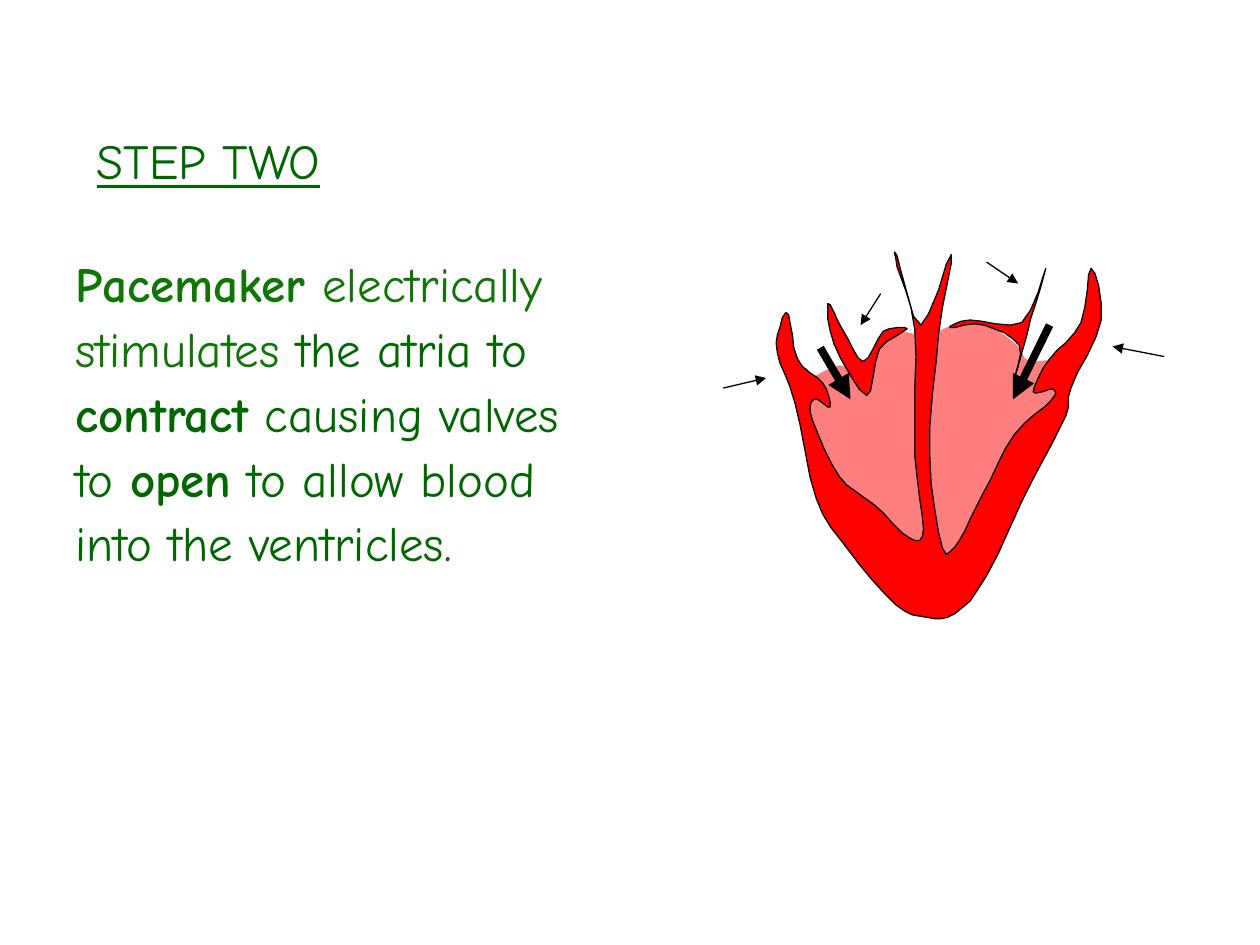
import lxml.etree
import pptx
import pptx.dml.color
import pptx.enum.shapes
import pptx.oxml.ns
import pptx.util

WIDTH, HEIGHT = pptx.util.Inches(10), pptx.util.Inches(7.5)
COLUMNS = 1000
CELL = WIDTH // COLUMNS
CURVE_STEPS = 4
FONT = "Comic Neue"
COLORS = {"muscle": "FF0000", "outline": "000000", "heading": "006600", "pacemaker": "107407"}

LEFT_CHAMBER = [
    (640, 318), (680, 410), (736, 437), (732, 310), (731, 270), (702, 264), (685, 290),
    (660, 292),
]
RIGHT_CHAMBER = [
    (740, 272), (736, 360), (750, 440), (795, 385), (842, 322), (842, 288), (816, 286),
    (806, 273), (776, 257),
]
HEART_WALL = [
    (620, 256), (617, 280), (631, 320), (648, 396), (673, 436), (711, 480), (736, 490),
    (758, 487), (783, 457), (820, 380), (846, 330), (850, 308), (874, 254), (866, 213),
    (858, 256), (833, 285), (820, 311), (836, 309), (834, 318), (805, 345), (780, 392),
    (762, 428), (748, 435), (738, 362), (745, 265), (755, 202), (731, 258), (712, 203),
    (712, 212), (726, 261), (726, 361), (733, 420), (722, 427), (693, 400), (666, 378),
    (645, 334), (646, 317), (659, 323), (653, 304), (633, 285), (626, 250),
]
LEFT_VALVE = [
    (657, 241), (662, 273), (688, 314), (698, 277), (720, 261), (701, 263), (685, 287),
    (669, 262),
]
RIGHT_VALVE = [
    (830, 213), (818, 253), (806, 298), (809, 274), (781, 258), (754, 260), (770, 254),
    (811, 256),
]
BLOOD_FLOWS = [((651, 276), (675, 317)), ((833, 258), (804, 317))]
POINTERS = [
    ((574, 308), (608, 300)), ((699, 233), (683, 258)),
    ((783, 208), (808, 225)), ((924, 283), (883, 275)),
]


def rgb(name):
    """Return the named colour."""
    return pptx.dml.color.RGBColor.from_string(COLORS[name])


def blend(a, b, c, d, t):
    """Return the Catmull-Rom value at share t of the way from b to c."""
    return b + t / 2 * (c - a + t * (2 * a - 5 * b + 4 * c - d + t * (3 * (b - c) + d - a)))


def smooth(corners):
    """Return a closed curve through the corners as a finer list of points."""
    count = len(corners)
    curve = []
    for index in range(count):
        near = [corners[(index + offset) % count] for offset in (-1, 0, 1, 2)]
        for step in range(CURVE_STEPS):
            curve.append(tuple(blend(*axis, step / CURVE_STEPS) for axis in zip(*near)))
    return curve


def add_tissue(group, corners, see_through=False):
    """Draw a red part of the heart, either outlined or half transparent."""
    curve = smooth(corners)
    builder = group.shapes.build_freeform(*curve[0], scale=CELL)
    builder.add_line_segments(curve[1:], close=True)
    tissue = builder.convert_to_shape()
    tissue.shadow.inherit = False
    tissue.fill.solid()
    tissue.fill.fore_color.rgb = rgb("muscle")
    if see_through:
        tissue.line.fill.background()
        color = tissue._element.spPr.find(".//" + pptx.oxml.ns.qn("a:srgbClr"))
        lxml.etree.SubElement(color, pptx.oxml.ns.qn("a:alpha"), val="50000")
    else:
        tissue.line.color.rgb = rgb("outline")
        tissue.line.width = pptx.util.Pt(0.75)


def add_arrow(group, start, end, weight):
    """Draw a straight black arrow between two grid points."""
    ends = [CELL * place for place in (*start, *end)]
    arrow = group.shapes.add_connector(pptx.enum.shapes.MSO_CONNECTOR.STRAIGHT, *ends)
    arrow.line.color.rgb = rgb("outline")
    arrow.line.width = pptx.util.Pt(weight)
    properties = arrow._element.spPr
    line = properties.find(pptx.oxml.ns.qn("a:ln"))
    lxml.etree.SubElement(line, pptx.oxml.ns.qn("a:tailEnd"), type="triangle")
    lxml.etree.SubElement(properties, pptx.oxml.ns.qn("a:effectLst"))


def add_paragraph_box(slide, column, row, columns, rows):
    """Add a wrapping text box on the grid and return its paragraph in the slide's font."""
    box = slide.shapes.add_textbox(*(CELL * size for size in (column, row, columns, rows)))
    box.text_frame.word_wrap = True
    paragraph = box.text_frame.paragraphs[0]
    paragraph.font.name = FONT
    paragraph.font.size = pptx.util.Pt(28)
    return paragraph


def add_heading(slide, wording):
    """Write the underlined step heading."""
    heading = add_paragraph_box(slide, 67, 99, 307, 57)
    heading.text = wording
    heading.font.underline = True
    heading.font.color.rgb = rgb("heading")


def add_explanation(slide, phrases):
    """Write the step's text from phrases of wording, colour name and weight."""
    explanation = add_paragraph_box(slide, 0, 192, 483, 318)
    explanation.line_spacing = 1.1
    explanation._p.get_or_add_pPr().set("marL", str(50 * CELL))
    for wording, color, bold in phrases:
        phrase = explanation.add_run()
        phrase.text = wording
        phrase.font.bold = bold
        phrase.font.color.rgb = rgb(color)


def main():
    """Build the slide on the heart's second step."""
    deck = pptx.Presentation()
    deck.slide_width, deck.slide_height = WIDTH, HEIGHT
    slide = deck.slides.add_slide(deck.slide_layouts[6])
    heart = slide.shapes.add_group_shape()
    for chamber in (RIGHT_CHAMBER, LEFT_CHAMBER):
        add_tissue(heart, chamber, see_through=True)
    for muscle in (HEART_WALL, LEFT_VALVE, RIGHT_VALVE):
        add_tissue(heart, muscle)
    for weight, arrows in ((4.5, BLOOD_FLOWS), (0.75, POINTERS)):
        for start, end in arrows:
            add_arrow(heart, start, end, weight)
    add_explanation(slide, [
        ("Pacemaker ", "pacemaker", True),
        ("electrically stimulates ", "pacemaker", False),
        ("the atria to ", "heading", False),
        ("contract", "heading", True),
        (" causing valves to ", "heading", False),
        ("open", "heading", True),
        (" to allow blood into the ventricles.", "heading", False),
    ])
    add_heading(slide, "STEP TWO")
    deck.save("out.pptx")


if __name__ == "__main__":
    main()
